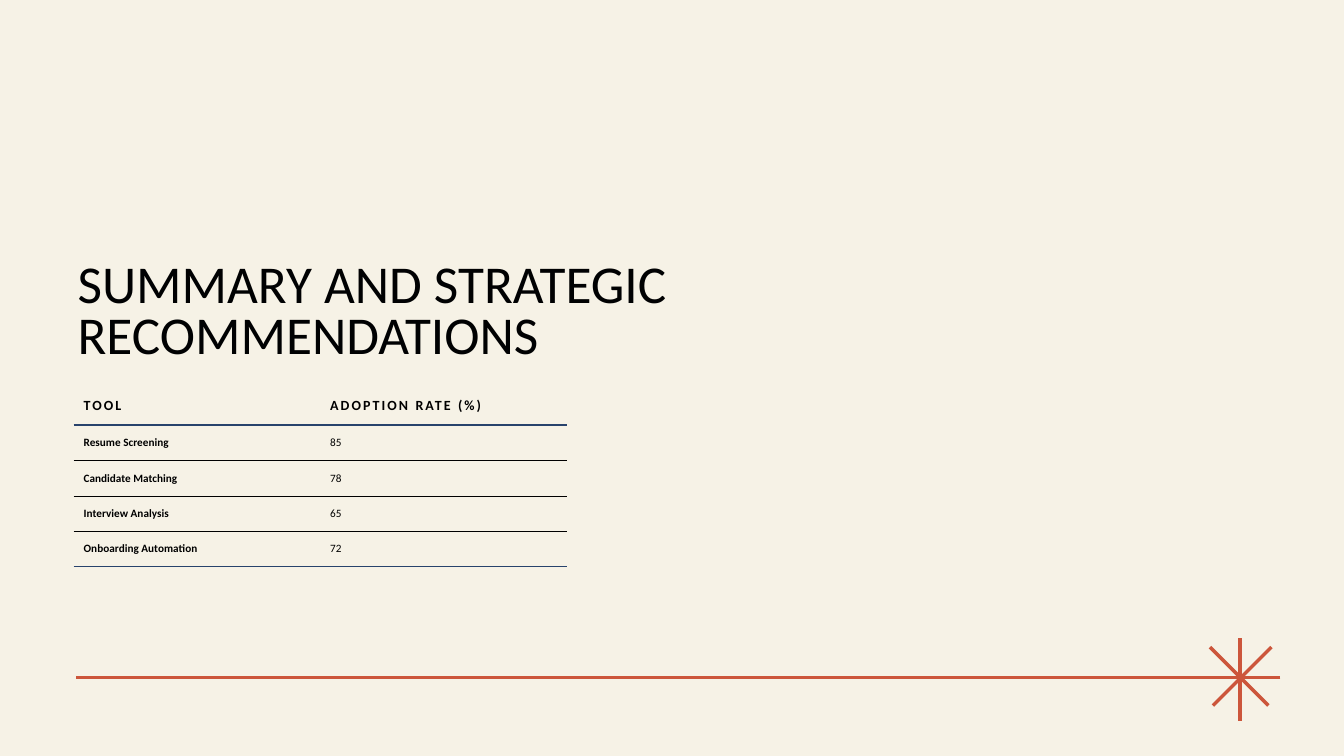
from lxml import etree
from pptx import Presentation
from pptx.dml.color import RGBColor
from pptx.enum.shapes import MSO_CONNECTOR
from pptx.enum.text import MSO_ANCHOR, MSO_AUTO_SIZE, PP_ALIGN
from pptx.oxml.ns import qn
from pptx.util import Inches, Pt

STRAIGHT = MSO_CONNECTOR.STRAIGHT
BOTTOM, MIDDLE = MSO_ANCHOR.BOTTOM, MSO_ANCHOR.MIDDLE
LEFT = PP_ALIGN.LEFT
NO_AUTOFIT = MSO_AUTO_SIZE.NONE

CREAM = RGBColor(0xF6, 0xF2, 0xE6)
RUST = RGBColor(0xCC, 0x56, 0x3B)
NAVY = RGBColor(0x28, 0x43, 0x6C)
BLACK = RGBColor(0x00, 0x00, 0x00)
INK = RGBColor(0x00, 0x01, 0x02)
FONT = "Calibri"

STAR_AND_RULE = [
    (12.3, 6.33, 12.3, 7.15),
    (12.7, 6.72, 0.75, 6.72),
    (12.61, 6.42, 12.03, 7),
    (12.58, 7, 12, 6.42),
]
ADOPTION = [
    ("TOOL", "ADOPTION RATE (%)"),
    ("Resume Screening", "85"),
    ("Candidate Matching", "78"),
    ("Interview Analysis", "65"),
    ("Onboarding Automation", "72"),
]
HEAVY, THIN = (NAVY, 1.5), (BLACK, 0.5)


def style_font(font, size, color, bold=False):
    font.name = FONT
    font.size = Pt(size)
    font.color.rgb = color
    font.bold = bold


def add_stroke(slide, ends):
    stroke = slide.shapes.add_connector(STRAIGHT, *map(Inches, ends))
    stroke.line.color.rgb = RUST
    stroke.line.width = Pt(2.5)
    etree.SubElement(stroke.element.spPr, qn("a:effectLst"))


def set_title(slide, text):
    title = slide.shapes.title
    title.left, title.top = Inches(0.67), Inches(2)
    title.width, title.height = Inches(7), Inches(1.67)
    frame = title.text_frame
    frame.text = text
    frame.word_wrap = True
    frame.auto_size = NO_AUTOFIT
    frame.vertical_anchor = BOTTOM
    paragraph = frame.paragraphs[0]
    paragraph.alignment = LEFT
    paragraph.line_spacing = 0.8
    style_font(paragraph.font, 38, INK)


def set_border(cell, side, border):
    properties = cell._tc.get_or_add_tcPr()
    line = etree.SubElement(properties, qn(f"a:ln{side}"))
    if border is None:
        etree.SubElement(line, qn("a:noFill"))
        return
    color, width = border
    line.set("w", str(Pt(width)))
    fill = etree.SubElement(line, qn("a:solidFill"))
    etree.SubElement(fill, qn("a:srgbClr"), val=str(color))


def fill_cell(cell, text, is_header, is_label, top, bottom):
    cell.text = text
    cell.vertical_anchor = MIDDLE
    cell.margin_left = cell.margin_right = Inches(0.1)
    cell.margin_top = cell.margin_bottom = Inches(0.1)
    for side, border in (("L", None), ("R", None), ("T", top), ("B", bottom)):
        set_border(cell, side, border)
    cell.fill.background()
    paragraph = cell.text_frame.paragraphs[0]
    style_font(paragraph.font, 10 if is_header else 8, BLACK, is_header or is_label)
    if is_header:
        paragraph.runs[0].font._element.set("spc", "150")


def add_adoption_table(slide):
    table = slide.shapes.add_table(
        len(ADOPTION), 2, Inches(0.73), Inches(3.83), Inches(4.89), Inches(1.8)
    ).table
    rules = [None, HEAVY] + [THIN] * (len(ADOPTION) - 2) + [HEAVY]
    for row, texts in enumerate(ADOPTION):
        table.rows[row].height = Inches(0.39 if row == 0 else 0.35)
        for column, text in enumerate(texts):
            fill_cell(table.cell(row, column), text, row == 0, column == 0,
                      rules[row], rules[row + 1])


def main():
    deck = Presentation()
    deck.slide_width, deck.slide_height = Inches(13.33), Inches(7.5)
    slide = deck.slides.add_slide(deck.slide_layouts.get_by_name("Title Only"))
    slide.background.fill.solid()
    slide.background.fill.fore_color.rgb = CREAM
    for ends in STAR_AND_RULE:
        add_stroke(slide, ends)
    set_title(slide, "SUMMARY AND STRATEGIC RECOMMENDATIONS")
    add_adoption_table(slide)
    deck.save("out.pptx")


if __name__ == "__main__":
    main()
